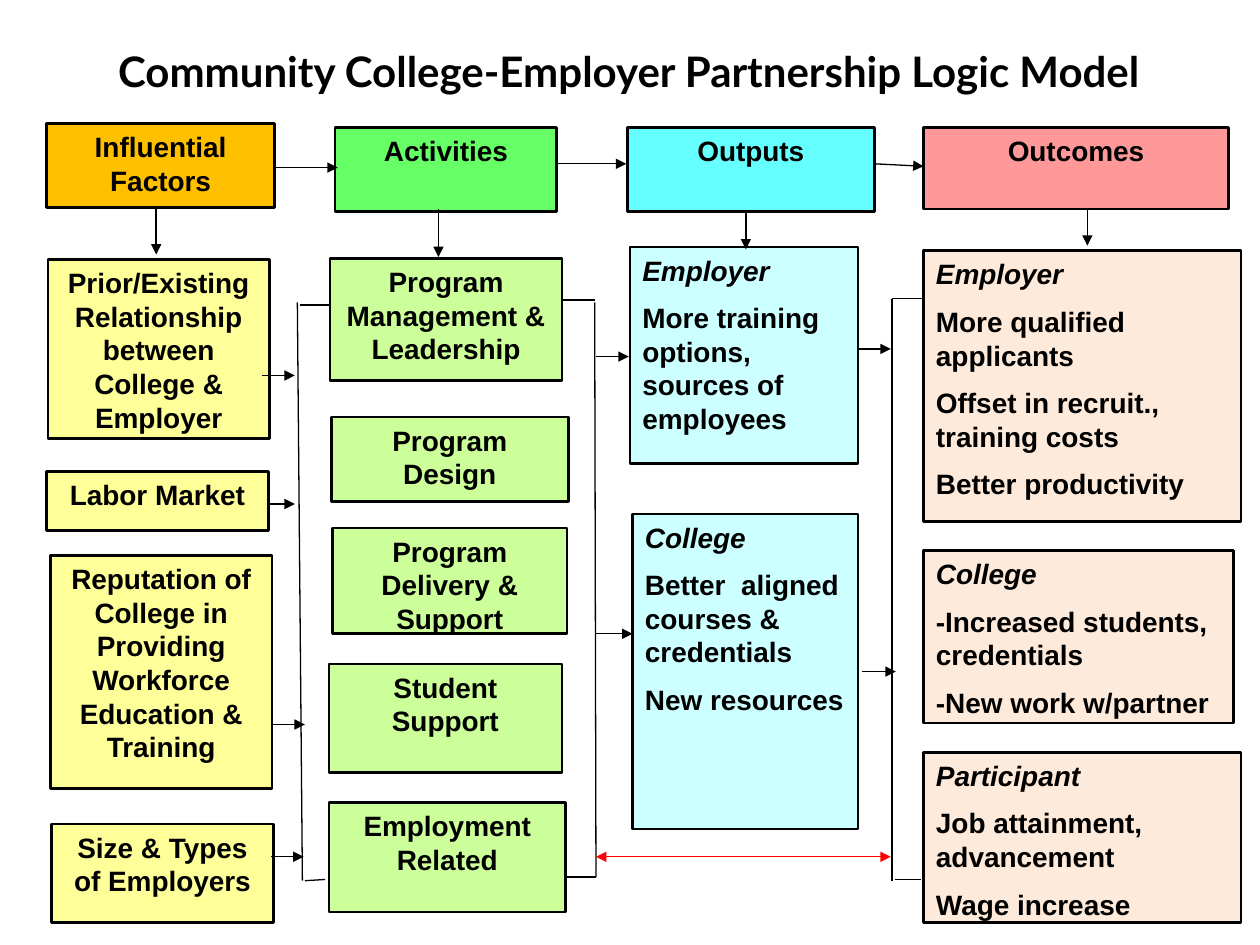
from dataclasses import dataclass

from lxml import etree
from pptx import Presentation
from pptx.dml.color import RGBColor
from pptx.enum.shapes import MSO_CONNECTOR, MSO_SHAPE
from pptx.enum.text import MSO_ANCHOR, PP_ALIGN
from pptx.oxml.ns import qn
from pptx.util import Emu, Pt

EMU_PER_PX = 9144  # 100 px to the inch
RECTANGLE = MSO_SHAPE.RECTANGLE
STRAIGHT = MSO_CONNECTOR.STRAIGHT
TOP = MSO_ANCHOR.TOP
CENTER, LEFT = PP_ALIGN.CENTER, PP_ALIGN.LEFT

BLACK = RGBColor(0x00, 0x00, 0x00)
RED = RGBColor(0xFF, 0x00, 0x00)
ORANGE = RGBColor(0xFF, 0xC0, 0x00)
YELLOW = RGBColor(0xFF, 0xFF, 0x99)
GREEN = RGBColor(0x66, 0xFF, 0x66)
PALE_GREEN = RGBColor(0xCC, 0xFF, 0x99)
CYAN = RGBColor(0x66, 0xFF, 0xFF)
PALE_CYAN = RGBColor(0xCC, 0xFF, 0xFF)
PINK = RGBColor(0xFF, 0x99, 0x99)
PEACH = RGBColor(0xFD, 0xEA, 0xDA)


@dataclass(frozen=True)
class Box:
    left: int
    top: int
    width: int
    height: int
    lines: tuple[str, ...]


@dataclass(frozen=True)
class Column:
    header: Box
    header_fill: RGBColor
    boxes: tuple[Box, ...]
    fill: RGBColor
    has_headings: bool = False


@dataclass(frozen=True)
class Line:
    x1: int
    y1: int
    x2: int
    y2: int
    weight: float = 0.75
    color: RGBColor = BLACK
    head: bool = False
    tail: bool = False


TITLE = Box(19, 31, 960, 51, ("Community College-Employer Partnership Logic Model",))

COLUMNS = (
    Column(
        Box(37, 98, 181, 67, ("Influential Factors",)), ORANGE,
        (
            Box(38, 206, 176, 142, ("Prior/Existing Relationship between College & Employer",)),
            Box(37, 374, 176, 47, ("Labor Market",)),
            Box(40, 441, 176, 185,
                ("Reputation of College in Providing Workforce Education & Training",)),
            Box(41, 654, 176, 78, ("Size & Types of Employers",)),
        ),
        YELLOW,
    ),
    Column(
        Box(266, 101, 176, 67, ("Activities",)), GREEN,
        (
            Box(262, 205, 184, 97, ("Program Management & Leadership",)),
            Box(263, 331, 188, 67, ("Program Design",)),
            Box(264, 419, 186, 84, ("Program Delivery & Support",)),
            Box(261, 527, 185, 86, ("Student Support",)),
            Box(261, 637, 188, 87, ("Employment Related",)),
        ),
        PALE_GREEN,
    ),
    Column(
        Box(498, 101, 196, 67, ("Outputs",)), CYAN,
        (
            Box(500, 196, 181, 172,
                ("Employer", "More training options, sources of employees")),
            Box(502, 408, 179, 250,
                ("College", "Better  aligned courses & credentials", "New resources")),
        ),
        PALE_CYAN, has_headings=True,
    ),
    Column(
        Box(733, 101, 242, 65, ("Outcomes",)), PINK,
        (
            Box(733, 199, 252, 215,
                ("Employer", "More qualified applicants",
                 "Offset in recruit., training costs", "Better productivity")),
            Box(733, 437, 246, 137,
                ("College", "-Increased students, credentials", "-New work w/partner")),
            Box(733, 597, 252, 135,
                ("Participant", "Job attainment, advancement", "Wage increase")),
        ),
        PEACH, has_headings=True,
    ),
)

BRACKETS = (
    Line(236, 240, 240, 699), Line(238, 242, 263, 242), Line(242, 699, 258, 698),
    Line(472, 240, 473, 696), Line(447, 238, 472, 238), Line(450, 696, 473, 696),
    Line(708, 237, 708, 699), Line(708, 237, 733, 237), Line(710, 698, 731, 698),
)

HEADER_ARROWS = (
    Line(217, 133, 268, 133, tail=True),
    Line(442, 130, 497, 130, tail=True),
    Line(694, 130, 733, 132, tail=True),
)

DOWN_ARROWS = tuple(
    Line(x, top, x, bottom, weight=1, tail=True)
    for x, top, bottom in ((124, 165, 202), (348, 166, 204), (592, 167, 198), (863, 166, 195))
)

FLOW_ARROWS = tuple(
    Line(start, y, end, y, tail=True)
    for start, end, y in (
        (208, 234, 298), (213, 234, 400), (216, 242, 575), (215, 241, 680),
        (473, 499, 283), (473, 502, 503), (681, 707, 277), (684, 711, 533),
    )
)

FEEDBACK_ARROW = Line(473, 680, 707, 680, color=RED, head=True, tail=True)


def px(length: int) -> Emu:
    return Emu(length * EMU_PER_PX)


def add_title(slide, box: Box) -> None:
    shape = slide.shapes.add_textbox(px(box.left), px(box.top), px(box.width), px(box.height))
    shape.text_frame.word_wrap = True
    paragraph = shape.text_frame.paragraphs[0]
    paragraph.text = box.lines[0]
    paragraph.alignment = CENTER
    font = paragraph.font
    font.name, font.size, font.bold = "Lato", Pt(24), True
    font.color.rgb = BLACK


def add_box(slide, box: Box, fill: RGBColor, has_heading: bool = False) -> None:
    """Draw a box; with a heading, its first line is italic and all text is left-aligned."""
    shape = slide.shapes.add_shape(
        RECTANGLE, px(box.left), px(box.top), px(box.width), px(box.height))
    shape.shadow.inherit = False
    shape.fill.solid()
    shape.fill.fore_color.rgb = fill
    shape.line.color.rgb = BLACK
    shape.line.width = Pt(1.5)
    frame = shape.text_frame
    frame.word_wrap = True
    frame.vertical_anchor = TOP
    for index, text in enumerate(box.lines):
        paragraph = frame.add_paragraph() if index else frame.paragraphs[0]
        paragraph.text = text
        paragraph.alignment = LEFT if has_heading else CENTER
        paragraph.line_spacing = Pt(19.2)
        if index:
            paragraph.space_before = Pt(8)
        font = paragraph.font
        font.name, font.size, font.bold = "Arial", Pt(16), True
        font.italic = has_heading and index == 0
        font.color.rgb = BLACK


def add_line(slide, line: Line) -> None:
    connector = slide.shapes.add_connector(
        STRAIGHT, px(line.x1), px(line.y1), px(line.x2), px(line.y2))
    connector.line.color.rgb = line.color
    connector.line.width = Pt(line.weight)
    properties = connector.line._get_or_add_ln()
    for tag, shown in (("a:headEnd", line.head), ("a:tailEnd", line.tail)):
        if shown:
            etree.SubElement(properties, qn(tag), type="triangle")
    etree.SubElement(connector._element.spPr, qn("a:effectLst"))


def main() -> None:
    presentation = Presentation()
    presentation.slide_width, presentation.slide_height = px(1000), px(750)
    slide = presentation.slides.add_slide(presentation.slide_layouts[6])
    add_title(slide, TITLE)
    for column in COLUMNS:
        add_box(slide, column.header, column.header_fill)
        for box in column.boxes:
            add_box(slide, box, column.fill, column.has_headings)
    for line in (*BRACKETS, *HEADER_ARROWS, *DOWN_ARROWS, *FLOW_ARROWS, FEEDBACK_ARROW):
        add_line(slide, line)
    presentation.save("out.pptx")


if __name__ == "__main__":
    main()
